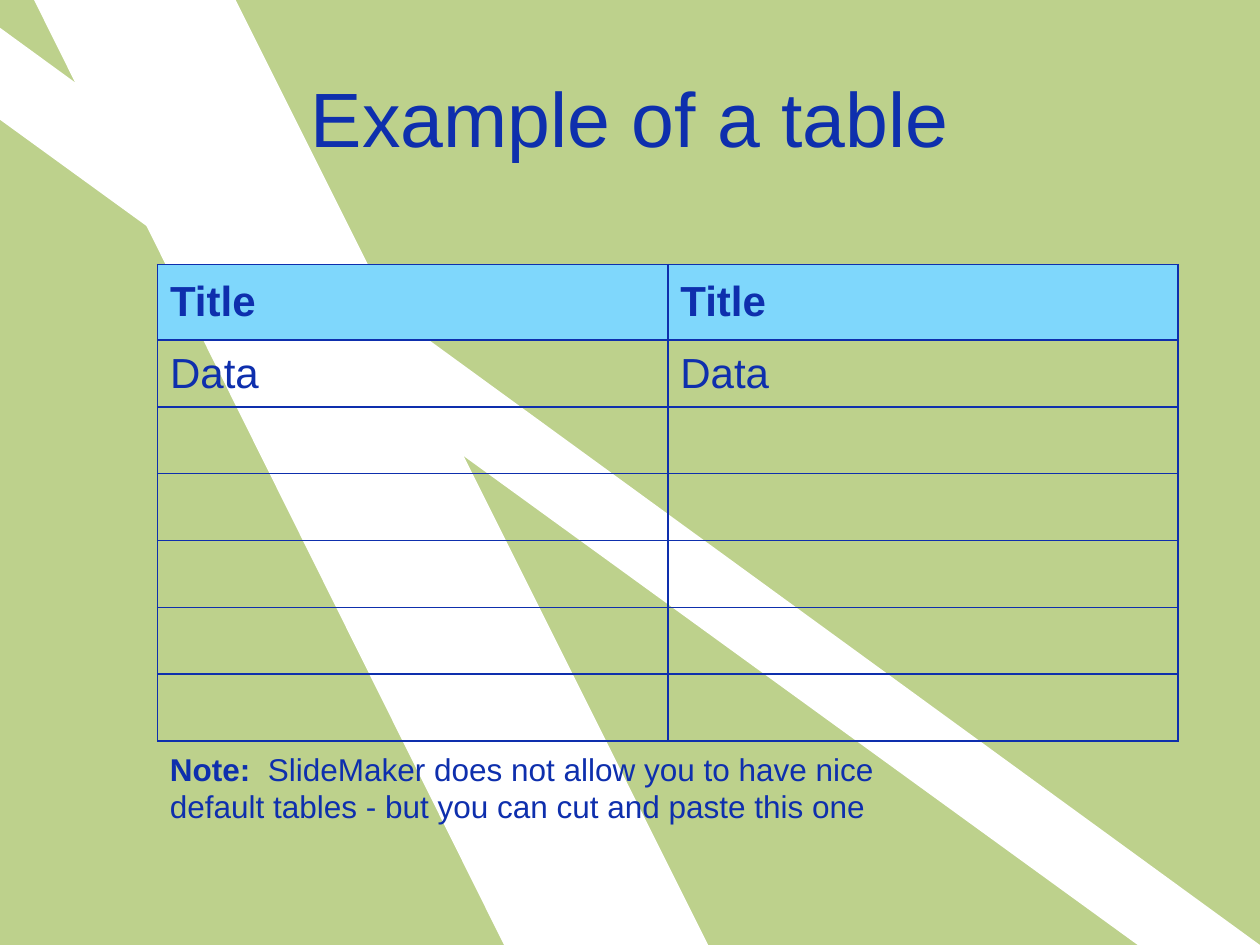
from typing import NamedTuple

from lxml.etree import SubElement
from pptx import Presentation
from pptx.dml.color import RGBColor
from pptx.enum.shapes import MSO_SHAPE
from pptx.enum.text import MSO_ANCHOR, PP_ALIGN
from pptx.oxml.ns import qn
from pptx.util import Pt

PX = 9144  # EMU per px, 100 px to the inch
COLORS = {"green": "BDD18C", "white": "FFFFFF", "navy": "0E2FAD", "sky": "7FD7FC"}


class Box(NamedTuple):
    left: int
    top: int
    width: int
    height: int

    def emu(self) -> list[int]:
        return [length * PX for length in self]


class Band(NamedTuple):
    corners: list[tuple[int, int]]


BACKDROP = Box(0, 0, 1000, 750)
TITLE = Box(50, 30, 900, 125)
GRID = Box(125, 210, 810, 378)
NOTE = Box(125, 590, 612, 71)
BANDS = [
    Band([(27, 0), (187, 0), (562, 750), (400, 750)]),
    Band([(0, 95), (0, 22), (1000, 750), (903, 750)]),
]
ROWS = [["Title", "Title"], ["Data", "Data"]] + [["", ""]] * 5
HEADER_HEIGHT, ROW_HEIGHT = 60, 53


def color(name: str) -> RGBColor:
    return RGBColor.from_string(COLORS[name])


def add_text(para, text: str, *, size: int, bold: bool = False, align=PP_ALIGN.LEFT) -> None:
    para.alignment = align
    span = para.add_run()
    span.text = text
    span.font.name = "Arial"
    span.font.size = Pt(size)
    span.font.bold = bold
    span.font.color.rgb = color("navy")


def paint(shape, name: str) -> None:
    shape.shadow.inherit = False
    shape.fill.solid()
    shape.fill.fore_color.rgb = color(name)
    shape.line.fill.background()


def draw_band(page, band: Band) -> None:
    builder = page.shapes.build_freeform(*band.corners[0], scale=PX)
    builder.add_line_segments(band.corners[1:], close=True)
    paint(builder.convert_to_shape(), "white")


def set_borders(cell) -> None:
    properties = cell._tc.get_or_add_tcPr()
    for index, side in enumerate(("a:lnL", "a:lnR", "a:lnT", "a:lnB")):
        line = properties.makeelement(qn(side), {"w": str(Pt(1))})
        properties.insert(index, line)
        fill = SubElement(line, qn("a:solidFill"))
        SubElement(fill, qn("a:srgbClr"), val=COLORS["navy"])


def draw_table(page, box: Box, rows: list[list[str]]) -> None:
    table = page.shapes.add_table(len(rows), len(rows[0]), *box.emu()).table
    table.horz_banding = False
    for r, texts in enumerate(rows):
        header = r == 0
        table.rows[r].height = (HEADER_HEIGHT if header else ROW_HEIGHT) * PX
        for c, text in enumerate(texts):
            cell = table.cell(r, c)
            cell.vertical_anchor = MSO_ANCHOR.MIDDLE
            if header:
                cell.fill.solid()
                cell.fill.fore_color.rgb = color("sky")
            else:
                cell.fill.background()
            if text:
                add_text(cell.text_frame.paragraphs[0], text, size=24, bold=header)
            set_borders(cell)


def main() -> None:
    deck = Presentation()
    deck.slide_width, deck.slide_height = BACKDROP.width * PX, BACKDROP.height * PX
    page = deck.slides.add_slide(deck.slide_layouts[5])

    # Backdrop with crossing bands
    paint(page.shapes.add_shape(MSO_SHAPE.RECTANGLE, *BACKDROP.emu()), "green")
    for band in BANDS:
        draw_band(page, band)

    # Title, raised above the backdrop
    title = page.shapes.title
    title.element.getparent().append(title.element)
    title.left, title.top, title.width, title.height = TITLE.emu()
    title.text_frame.vertical_anchor = MSO_ANCHOR.MIDDLE
    add_text(title.text_frame.paragraphs[0], "Example of a table", size=44, align=PP_ALIGN.CENTER)

    # Table
    draw_table(page, GRID, ROWS)

    # Note
    note = page.shapes.add_textbox(*NOTE.emu()).text_frame
    note.word_wrap = True
    para = note.paragraphs[0]
    add_text(para, "Note:  ", size=18, bold=True)
    add_text(
        para,
        "SlideMaker does not allow you to have nice default tables"
        " - but you can cut and paste this one",
        size=18,
    )

    deck.save("out.pptx")


if __name__ == "__main__":
    main()
